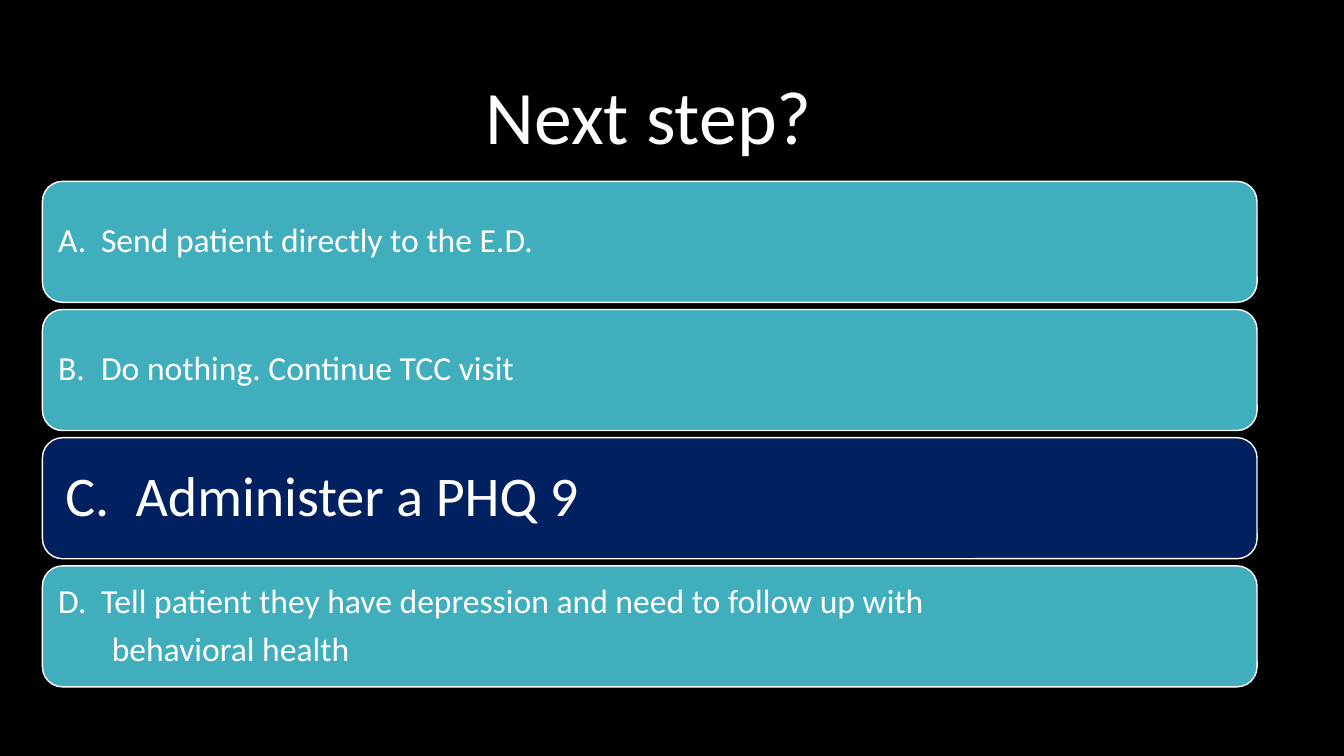
"""Build the "Next step?" slide with four answer options."""
from dataclasses import dataclass

from pptx import Presentation
from pptx.dml.color import RGBColor
from pptx.enum.shapes import MSO_SHAPE as Preset
from pptx.enum.text import MSO_ANCHOR as Anchor, PP_ALIGN as Align
from pptx.slide import Slide
from pptx.text.text import TextFrame, _Paragraph as Paragraph
from pptx.util import Cm, Pt

BLACK, WHITE, TEAL, NAVY = "000000", "FFFFFF", "41AEBD", "002060"
FIRST_TOP, PITCH = 4.57, 3.23


@dataclass
class Answer:
    """One option, with sizes in points and lengths in centimetres."""
    letter: str
    wording: str
    continuation: str = ""
    fill: str = TEAL
    size: int = 24
    inset: float = 0.25
    hang: float = 1.08


ANSWERS = [
    Answer("A", "Send patient directly to the E.D."),
    Answer("B", "Do nothing. Continue TCC visit"),
    Answer("C", "Administer a PHQ 9", fill=NAVY, size=40, inset=0.43, hang=1.77),
    Answer("D", "Tell patient they have depression and need to follow up with",
           "behavioral health"),
]


def color(value: str) -> RGBColor:
    """Turn a hex string into a colour."""
    return RGBColor.from_string(value)


def write(line: Paragraph, wording: str, size: int, align: Align) -> None:
    """Add one white run to a paragraph."""
    line.alignment = align
    line.line_spacing = 0.9
    run = line.add_run()
    run.text = wording
    run.font.name = "Calibri"
    run.font.size = Pt(size)
    run.font.color.rgb = color(WHITE)


def indent(line: Paragraph, margin: float, first: float) -> None:
    """Set the left margin and first-line indent of a paragraph."""
    properties = line._p.get_or_add_pPr()
    properties.set("marL", str(Cm(margin)))
    properties.set("indent", str(Cm(first)))


def prepare(frame: TextFrame) -> None:
    """Wrap the text and centre it vertically."""
    frame.word_wrap = True
    frame.vertical_anchor = Anchor.MIDDLE


def draw_title(slide: Slide, wording: str) -> None:
    """Draw the question above the options."""
    question = slide.shapes.add_textbox(Cm(1.75), Cm(1.19), Cm(29.21), Cm(3.68))
    prepare(question.text_frame)
    write(question.text_frame.paragraphs[0], wording, 54, Align.CENTER)


def draw_answer(slide: Slide, answer: Answer, top: float) -> None:
    """Draw one option as a rounded bar."""
    bar = slide.shapes.add_shape(
        Preset.ROUNDED_RECTANGLE, Cm(1.07), Cm(top), Cm(30.61), Cm(3.05))
    bar.shadow.inherit = False
    bar.fill.solid()
    bar.fill.fore_color.rgb = color(answer.fill)
    bar.line.color.rgb = color(WHITE)
    bar.line.width = Pt(1)

    frame = bar.text_frame
    prepare(frame)
    frame.margin_left = frame.margin_right = Cm(answer.inset)
    frame.margin_top = frame.margin_bottom = Cm(answer.inset)
    option = frame.paragraphs[0]
    indent(option, answer.hang, -answer.hang)
    write(option, f"{answer.letter}.\t{answer.wording}", answer.size, Align.LEFT)
    if answer.continuation:
        rest = frame.add_paragraph()
        indent(rest, 1.35, 0)
        write(rest, answer.continuation, answer.size, Align.LEFT)
    for line in frame.paragraphs:
        line.space_after = Pt(8)


def main() -> None:
    """Build and save the slide."""
    deck = Presentation()
    deck.slide_width, deck.slide_height = Cm(33.87), Cm(19.05)
    slide = deck.slides.add_slide(deck.slide_layouts[6])
    slide.background.fill.solid()
    slide.background.fill.fore_color.rgb = color(BLACK)
    draw_title(slide, "Next step?")
    for position, answer in enumerate(ANSWERS):
        draw_answer(slide, answer, FIRST_TOP + position * PITCH)
    deck.save("out.pptx")


if __name__ == "__main__":
    main()
